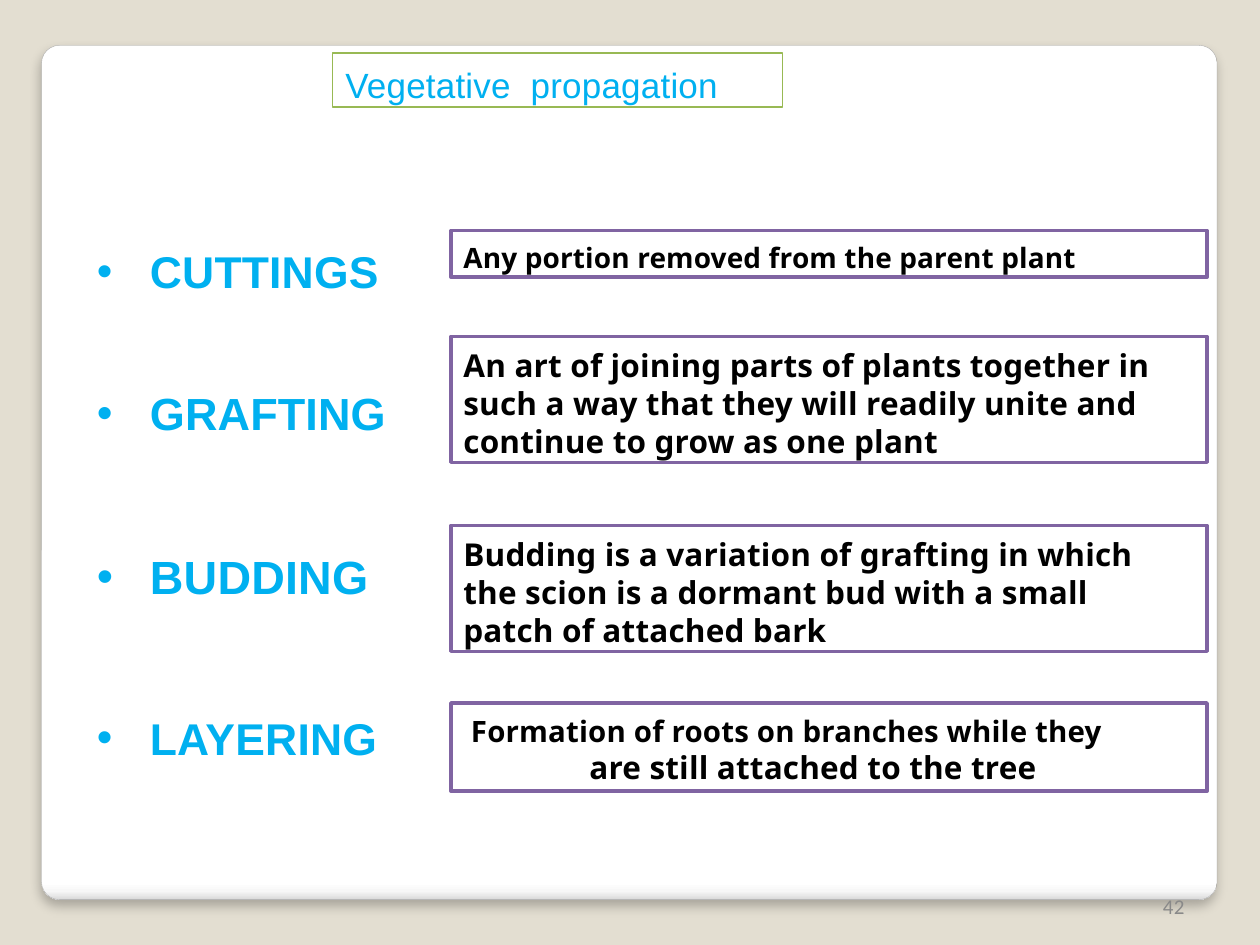
from lxml.etree import SubElement
from pptx import Presentation
from pptx.dml.color import RGBColor
from pptx.enum.shapes import MSO_SHAPE
from pptx.enum.text import MSO_ANCHOR, PP_ALIGN
from pptx.oxml import parse_xml
from pptx.oxml.ns import nsdecls, qn
from pptx.util import Inches, Pt

BEIGE = RGBColor(0xE3, 0xDE, 0xD1)
WHITE = RGBColor(0xFF, 0xFF, 0xFF)
BLACK = RGBColor(0x00, 0x00, 0x00)
SKY = RGBColor(0x00, 0xB0, 0xF0)
GREEN = RGBColor(0x98, 0xB9, 0x54)
PURPLE = RGBColor(0x80, 0x64, 0xA2)
EDGE = RGBColor(0xA4, 0xA4, 0xA4)
GREY = RGBColor(0x89, 0x89, 0x89)

CARD_STOPS = [(0, "FFFFFF"), (98, "FFFFFF"), (99, "F7F7F7"), (100, "DADADA")]
CARD_SHADOW = (
    f'<a:effectLst {nsdecls("a")}>'
    '<a:outerShdw blurRad="76200" dist="50800" dir="5400000" algn="tl" rotWithShape="0">'
    '<a:srgbClr val="000000"><a:alpha val="25000"/></a:srgbClr>'
    '</a:outerShdw></a:effectLst>'
)

METHODS = [
    ("CUTTINGS", 1.94, 25.4, 1.83, 0.37, 0.08,
     [("Any portion removed from the parent plant", 16, 0)]),
    ("GRAFTING", 3.06, 25.7, 2.67, 1.0, 0.08,
     [("An art of joining parts of plants together in such a way "
       "that they will readily unite and continue to grow as one plant", 18, 0)]),
    ("BUDDING", 4.35, 26.6, 4.17, 1.0, 0.08,
     [("Budding is a variation of grafting in which the scion is "
       "a dormant bud with a small patch of attached bark", 18, 0)]),
    ("LAYERING", 5.64, 25.4, 5.58, 0.7, 0.08,
     [("Formation of roots on branches while they", 16.8, 0.06),
      ("are still attached to the tree", 18, 1.0)]),
]


class SlideBuilder:
    heading_font = "Arial"
    body_font = "Noto Sans"
    number_font = "Calibri"

    def __init__(self, prs):
        self.s = prs.slides.add_slide(prs.slide_layouts[5])
        fill = self.s.background.fill
        fill.solid()
        fill.fore_color.rgb = BEIGE

    def place(self, sp, x, y, w, h):
        sp.left, sp.top, sp.width, sp.height = map(Inches, (x, y, w, h))

    def frame(self, sp, left=0, top=0, right=0, wrap=True):
        tf = sp.text_frame
        tf.word_wrap = wrap
        tf.vertical_anchor = MSO_ANCHOR.TOP
        tf.margin_left, tf.margin_top = Inches(left), Inches(top)
        tf.margin_right, tf.margin_bottom = Inches(right), 0
        return tf

    def run(self, p, text, size, font, color, bold=False):
        p.alignment = PP_ALIGN.LEFT
        r = p.add_run()
        r.text = text
        r.font.size = Pt(size)
        r.font.name = font
        r.font.bold = bold
        r.font.color.rgb = color
        r.font._element.set("spc", "10")

    def card(self, x, y, w, h):
        sp = self.s.shapes.add_shape(
            MSO_SHAPE.ROUNDED_RECTANGLE, Inches(x), Inches(y), Inches(w), Inches(h))
        sp.adjustments[0] = 0.021
        sp.fill.gradient()
        sp.fill.gradient_angle = 270
        stops = sp._element.spPr.find(f".//{qn('a:gsLst')}")
        stops.clear()
        for pos, color in CARD_STOPS:
            stop = SubElement(stops, qn("a:gs"), pos=str(pos * 1000))
            SubElement(stop, qn("a:srgbClr"), val=color)
        sp.line.color.rgb = EDGE
        sp.line.width = Pt(0.16)
        sp._element.spPr.append(parse_xml(CARD_SHADOW))
        tree = self.s.shapes._spTree
        tree.remove(sp._element)
        tree.insert(2, sp._element)

    def title(self, text, x, y, w, h):
        sp = self.s.shapes.title
        self.place(sp, x, y, w, h)
        sp.line.color.rgb = GREEN
        sp.line.width = Pt(0.75)
        tf = self.frame(sp, left=0.1, top=0.08)
        self.run(tf.paragraphs[0], text, 20, self.heading_font, SKY)

    def text(self, text, x, y, w, h, size, font, color):
        sp = self.s.shapes.add_textbox(Inches(x), Inches(y), Inches(w), Inches(h))
        p = self.frame(sp, wrap=False).paragraphs[0]
        self.run(p, text, size, font, color)

    def bullet(self, text, x, y, size):
        sp = self.s.shapes.add_textbox(Inches(x), Inches(y), Inches(2.6), Inches(0.5))
        p = self.frame(sp).paragraphs[0]
        pPr = p._p.get_or_add_pPr()
        indent = Inches(0.42)
        pPr.set("marL", str(indent))
        pPr.set("indent", str(-indent))
        SubElement(pPr, qn("a:buFont"), typeface=self.heading_font)
        SubElement(pPr, qn("a:buChar"), char="•")
        self.run(p, text, size, self.heading_font, SKY, bold=True)

    def definition(self, lines, x, y, w, h, top):
        sp = self.s.shapes.add_shape(
            MSO_SHAPE.RECTANGLE, Inches(x), Inches(y), Inches(w), Inches(h))
        sp.shadow.inherit = False
        sp.fill.solid()
        sp.fill.fore_color.rgb = WHITE
        sp.line.color.rgb = PURPLE
        sp.line.width = Pt(2)
        tf = self.frame(sp, left=0.1, top=top, right=0.3)
        for i, (text, size, indent) in enumerate(lines):
            p = tf.add_paragraph() if i else tf.paragraphs[0]
            p._p.get_or_add_pPr().set("marL", str(Inches(indent)))
            p.line_spacing = Pt(round(size * 1.2, 1))
            self.run(p, text, size, self.body_font, BLACK, bold=True)


def main():
    prs = Presentation()
    prs.slide_width, prs.slide_height = Inches(10), Inches(7.5)
    b = SlideBuilder(prs)
    b.card(0.33, 0.36, 9.33, 6.78)
    b.title("Vegetative  propagation", 2.64, 0.42, 3.57, 0.43)
    for name, name_y, size, box_y, box_h, top, lines in METHODS:
        b.bullet(name, 0.77, name_y, size)
        b.definition(lines, 3.58, box_y, 6, box_h, top)
    b.text("42", 9.23, 7.09, 0.21, 0.17, 12, b.number_font, GREY)
    prs.save("out.pptx")


if __name__ == "__main__":
    main()
